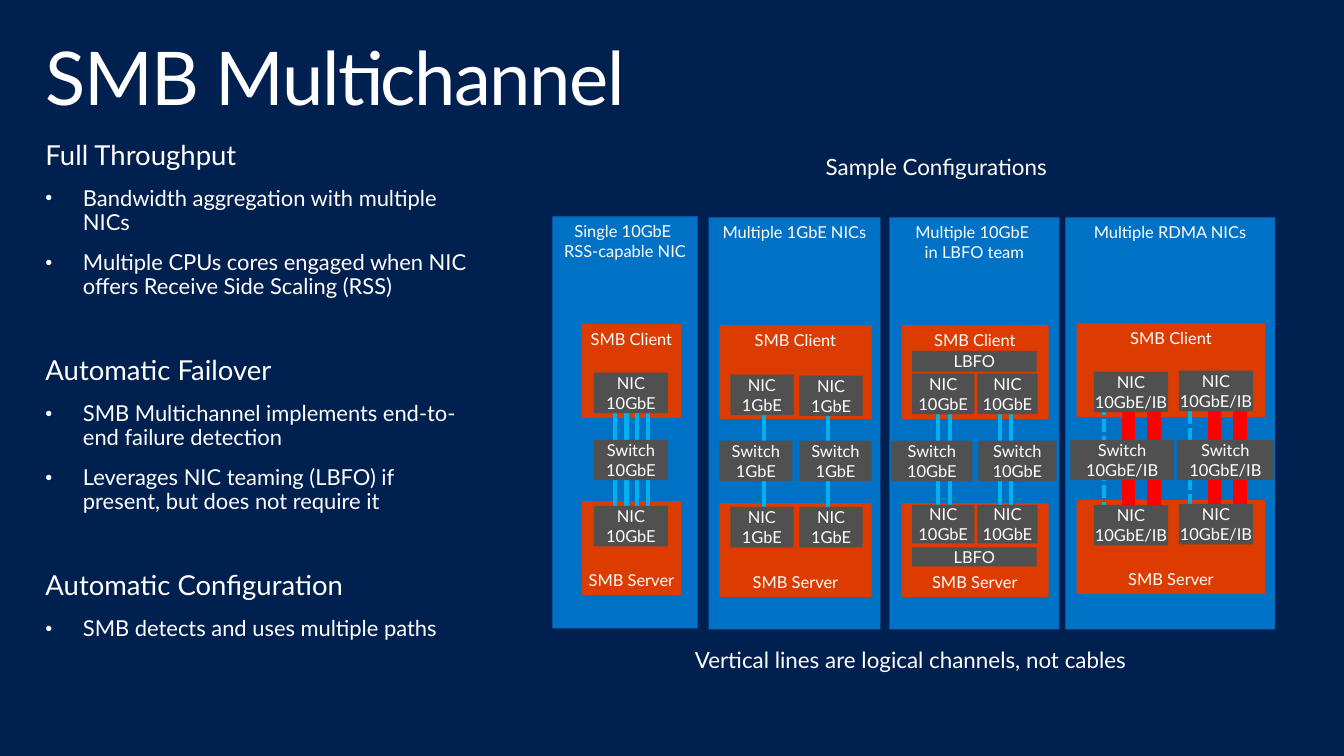
import dataclasses
import typing

import lxml.etree
import pptx
import pptx.dml.color
import pptx.enum.dml
import pptx.enum.shapes
import pptx.enum.text
import pptx.oxml.ns
import pptx.util

WIDTH, HEIGHT = pptx.util.Inches(13.6), pptx.util.Inches(7.65)
COLUMN, ROW = WIDTH / 136, HEIGHT / 76.5
NAVY, BLUE, ORANGE, GRAY = "002050", "0072C6", "DC3C00", "505050"
WHITE, CYAN, RED = "FFFFFF", "00B0F0", "FF0000"
TOP = pptx.enum.text.MSO_ANCHOR.TOP
MIDDLE = pptx.enum.text.MSO_ANCHOR.MIDDLE
BOTTOM = pptx.enum.text.MSO_ANCHOR.BOTTOM
LEFT = pptx.enum.text.PP_ALIGN.LEFT
CENTER = pptx.enum.text.PP_ALIGN.CENTER
PANEL_ROWS, HOST_ROWS, DEVICE_ROWS, CHANNEL_ROWS = 41.7, 9.5, 4.1, 13.7


class Frame(typing.NamedTuple):
    left: float
    top: float
    width: float
    height: float


class Stroke(typing.NamedTuple):
    color: str
    points: float
    dashed: bool = False


class Channel(typing.NamedTuple):
    column: float
    top: float
    stroke: Stroke


class Extent(typing.NamedTuple):
    left: float
    width: float


@dataclasses.dataclass
class Lane:
    nic: Extent
    switch: Extent
    client_nic_top: float
    server_nic_top: float
    channels: list[Channel]


@dataclasses.dataclass
class Panel:
    title: str
    extent: Extent
    top: float
    host: Extent
    client_top: float
    server_top: float
    switch_top: float
    speed: str
    lanes: list[Lane]
    teams: tuple[Frame, ...] = ()
    server_nic_rows: float = DEVICE_ROWS


class Section(typing.NamedTuple):
    heading: str
    points: list[str]
    space_before: float


TCP = Stroke(CYAN, 3)
IDLE = Stroke(CYAN, 3, True)
RDMA = Stroke(RED, 10)


def channels(top: float, *columns: float) -> list[Channel]:
    return [Channel(column, top, TCP) for column in columns]


def rdma_channels(top: float, column: float) -> list[Channel]:
    return [Channel(column + 2.5, top, RDMA), Channel(column, top, IDLE),
            Channel(column + 5.1, top - 0.3, RDMA)]


PANELS = [
    Panel("Single 10GbE \vRSS-capable NIC", Extent(55.9, 14.7), 21.9, Extent(58.85, 10.1),
          32.8, 50.7, 44.5, "10GbE",
          [Lane(Extent(60.1, 7.5), Extent(60.1, 7.5), 37.7, 51.2,
                channels(40.9, 62.2, 63.4, 64.5, 65.6))]),
    Panel("Multiple 1GbE NICs", Extent(71.7, 17.4), 22, Extent(72.8, 15.4),
          32.9, 50.9, 44.6, "1GbE",
          [Lane(Extent(73.9, 6.4), Extent(72.8, 7.4), 37.9, 51.3, channels(40, 77.3)),
           Lane(Extent(80.9, 6.4), Extent(80.9, 7.3), 38, 51.3, channels(40, 83.8))]),
    Panel("Multiple 10GbE \vin LBFO team", Extent(90, 17.2), 22, Extent(91.2, 14.9),
          32.9, 50.9, 44.6, "10GbE",
          [Lane(Extent(92.3, 6.3), Extent(90.2, 8.2), 37.8, 51.1, channels(39.8, 94.9, 96.1)),
           Lane(Extent(98.9, 6.1), Extent(99, 7.9), 37.8, 51.1, channels(39.8, 101.2, 102.3))],
          (Frame(92.3, 35.5, 12.6, 2.1), Frame(92.3, 55.4, 12.6, 1.9)), 3.9),
    Panel("Multiple RDMA NICs", Extent(107.8, 21.2), 22, Extent(108.95, 19.1),
          32.7, 50.6, 44.5, "10GbE/IB",
          [Lane(Extent(110.7, 7.5), Extent(108.3, 10.5), 37.6, 51.1, rdma_channels(40, 111.7)),
           Lane(Extent(119.3, 7.5), Extent(119.1, 9.8), 37.5, 51, rdma_channels(39.2, 120.4))]),
]

SECTIONS = [
    Section("Full Throughput",
            ["Bandwidth aggregation with multiple NICs",
             "Multiple CPUs cores engaged when NIC offers Receive Side Scaling (RSS)"], 12.2),
    Section("Automatic Failover",
            ["SMB Multichannel implements end-to-end failure detection",
             "Leverages NIC teaming (LBFO) if present, but does not require it"], 41.7),
    Section("Automatic Configuration", ["SMB detects and uses multiple paths"], 41.7),
]


def rgb(color: str) -> pptx.dml.color.RGBColor:
    return pptx.dml.color.RGBColor.from_string(color)


def place(frame: Frame) -> list[int]:
    return [round(length * unit) for length, unit in zip(frame, (COLUMN, ROW, COLUMN, ROW))]


def style(para, size: float, align=LEFT) -> None:
    para.alignment = align
    para.font.name = "Lato"
    para.font.size = pptx.util.Pt(size)
    para.font.color.rgb = rgb(WHITE)


def set_text(box, text: str, size: float, anchor, align, inset: tuple[float, float]) -> None:
    body = box.text_frame
    body.word_wrap = True
    body.vertical_anchor = anchor
    body.margin_left = body.margin_right = round(inset[0] * COLUMN)
    body.margin_top = body.margin_bottom = round(inset[1] * ROW)
    body.text = text
    for para in body.paragraphs:
        style(para, size, align)


def draw_block(page, frame: Frame, color: str, text: str, anchor=MIDDLE) -> None:
    block = page.shapes.add_shape(pptx.enum.shapes.MSO_SHAPE.RECTANGLE, *place(frame))
    block.shadow.inherit = False
    block.fill.solid()
    block.fill.fore_color.rgb = rgb(color)
    block.line.fill.background()
    set_text(block, text, 12, anchor, CENTER, (0, 0.5))


def draw_label(page, frame: Frame, text: str, size: float, anchor=TOP, align=CENTER,
               inset: tuple[float, float] = (0, 0)):
    label = page.shapes.add_textbox(*place(frame))
    set_text(label, text, size, anchor, align, inset)
    return label


def draw_channel(page, channel: Channel) -> None:
    column = round(channel.column * COLUMN)
    start, end = round((channel.top + CHANNEL_ROWS) * ROW), round(channel.top * ROW)
    line = page.shapes.add_connector(
        pptx.enum.shapes.MSO_CONNECTOR.STRAIGHT, column, start, column, end)
    line.line.color.rgb = rgb(channel.stroke.color)
    line.line.width = pptx.util.Pt(channel.stroke.points)
    if channel.stroke.dashed:
        line.line.dash_style = pptx.enum.dml.MSO_LINE.SQUARE_DOT
    lxml.etree.SubElement(line._element.spPr, pptx.oxml.ns.qn("a:effectLst"))


def draw_panel(page, panel: Panel) -> None:
    draw_block(page, Frame(panel.extent.left, panel.top, panel.extent.width, PANEL_ROWS),
               BLUE, panel.title, TOP)
    for name, top, anchor in (("SMB Server", panel.server_top, BOTTOM),
                              ("SMB Client", panel.client_top, TOP)):
        draw_block(page, Frame(panel.host.left, top, panel.host.width, HOST_ROWS),
                   ORANGE, name, anchor)
    for team in panel.teams:
        draw_block(page, team, GRAY, "LBFO")
    for lane in panel.lanes:
        for channel in lane.channels:
            draw_channel(page, channel)
        for name, extent, top, rows in (
                ("Switch", lane.switch, panel.switch_top, DEVICE_ROWS),
                ("NIC", lane.nic, lane.client_nic_top, DEVICE_ROWS),
                ("NIC", lane.nic, lane.server_nic_top, panel.server_nic_rows)):
            draw_block(page, Frame(extent.left, top, extent.width, rows),
                       GRAY, f"{name}\n{panel.speed}")


def add_bullet(para) -> None:
    properties = para._p.get_or_add_pPr()
    indent = round(3.8 * COLUMN)
    properties.set("marL", str(indent))
    properties.set("indent", str(-indent))
    for tag, name, value in (("a:buSzPct", "val", "90000"), ("a:buFont", "typeface", "Arial"),
                             ("a:buChar", "char", "•")):
        lxml.etree.SubElement(properties, pptx.oxml.ns.qn(tag)).set(name, value)


def draw_sections(page) -> None:
    lines = [(text, index > 0, 12.2 if index else section.space_before)
             for section in SECTIONS
             for index, text in enumerate([section.heading, *section.points])]
    box = draw_label(page, Frame(3, 13.3, 46.5, 50.5), "\n".join(line[0] for line in lines),
                     16, align=LEFT, inset=(1.6, 1))
    for para, (_, bulleted, space_before) in zip(box.text_frame.paragraphs, lines):
        para.line_spacing = 0.9
        para.space_before = pptx.util.Pt(space_before)
        if bulleted:
            para._p.get_or_add_pPr().remove(para.font._element)
            add_bullet(para)
        style(para, 16 if bulleted else 20)


def main() -> None:
    deck = pptx.Presentation()
    deck.slide_width, deck.slide_height = WIDTH, HEIGHT
    page = deck.slides.add_slide(deck.slide_layouts[6])
    page.background.fill.solid()
    page.background.fill.fore_color.rgb = rgb(NAVY)
    title = draw_label(page, Frame(3, 3.2, 130, 10), "SMB Multichannel", 54,
                       align=LEFT, inset=(1.6, 1)).text_frame.paragraphs[0]
    title.line_spacing = 0.9
    title.runs[0]._r.get_or_add_rPr().set("spc", "-100")
    draw_sections(page)
    draw_label(page, Frame(76.8, 13.6, 35.9, 6.6), "Sample Configurations", 16.3,
               MIDDLE, inset=(1, 0.5))
    for panel in PANELS:
        draw_panel(page, panel)
    draw_label(page, Frame(57.8, 65.4, 68.7, 2.8),
               "Vertical lines are logical channels, not cables", 16.3)
    deck.save("out.pptx")


if __name__ == "__main__":
    main()
